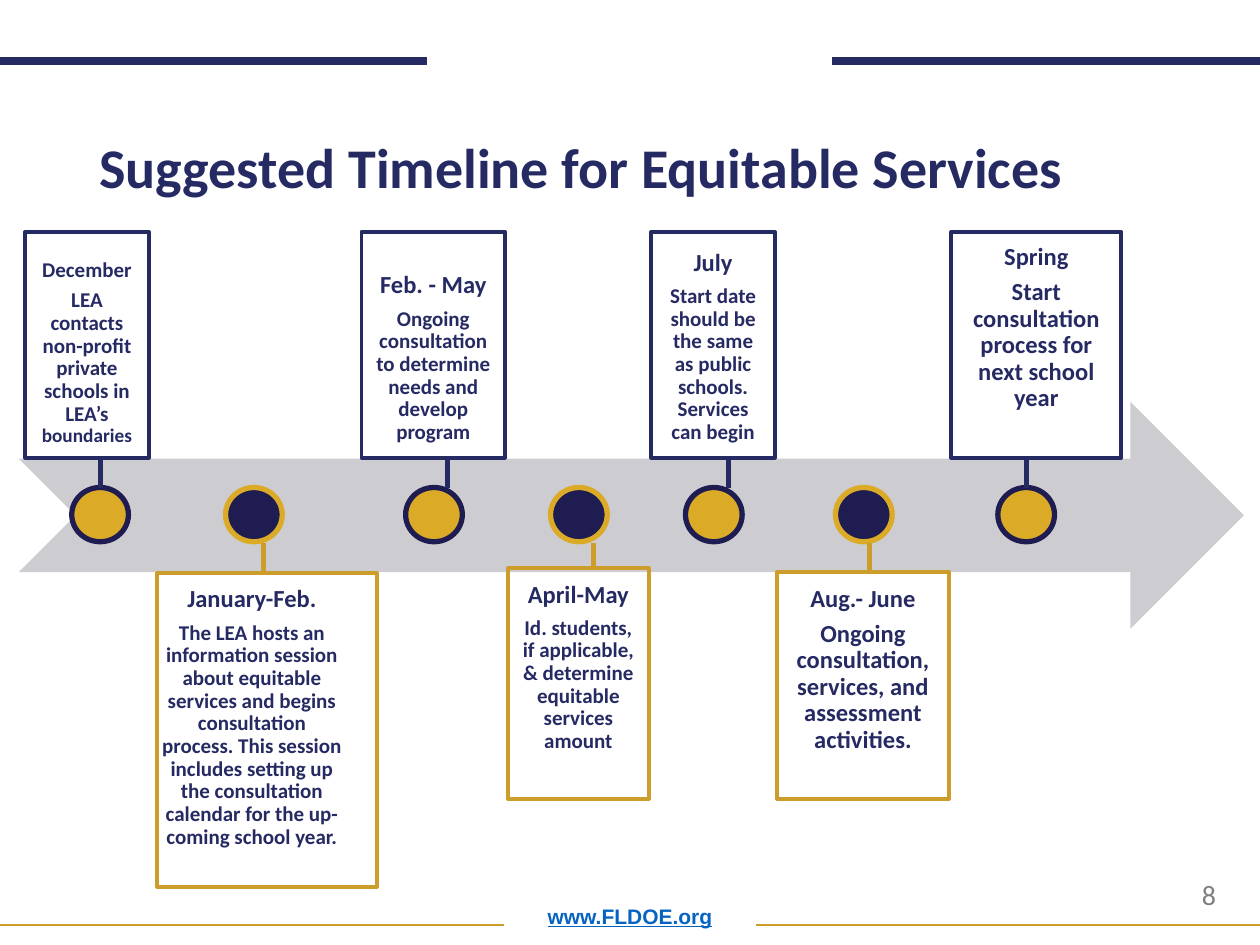
from dataclasses import dataclass

from lxml import etree
from pptx import Presentation
from pptx.dml.color import RGBColor
from pptx.enum.shapes import MSO_CONNECTOR, MSO_SHAPE
from pptx.enum.text import MSO_ANCHOR, PP_ALIGN
from pptx.oxml.ns import qn
from pptx.util import Pt

STRAIGHT = MSO_CONNECTOR.STRAIGHT
RECTANGLE, OVAL = MSO_SHAPE.RECTANGLE, MSO_SHAPE.OVAL
NOTCHED_ARROW = MSO_SHAPE.NOTCHED_RIGHT_ARROW
LEFT, CENTER = PP_ALIGN.LEFT, PP_ALIGN.CENTER
TOP, MIDDLE, BOTTOM = MSO_ANCHOR.TOP, MSO_ANCHOR.MIDDLE, MSO_ANCHOR.BOTTOM


@dataclass(frozen=True)
class Theme:
    navy: str = "262A63"
    dark_navy: str = "1F1C52"
    gold: str = "CD9D2C"
    bright_gold: str = "DBAB27"
    band: str = "CDCDD1"
    link: str = "0563C1"
    muted: str = "7F7F7F"
    font: str = "Calibri"
    footer_font: str = "Arial"
    title: int = 32
    page: int = 16
    large: int = 14
    body: int = 12
    small: int = 11


THEME = Theme()
INSET = 7.9
DOT_TOP, DOT_WIDTH, DOT_HEIGHT = 278.6, 32.4, 31
UPPER_TOP, UPPER_BOTTOM = 132.5, 261.6
LOWER_PIN_TOP = 310.3


@dataclass
class Event:
    left: float
    width: float
    dot_left: float
    pin_x: float
    paragraphs: list  # one list of (text, size) runs per paragraph
    above: bool = True
    top: float = UPPER_TOP
    height: float = UPPER_BOTTOM - UPPER_TOP
    insets: tuple = (INSET,) * 4


def heading_and_body(heading, body, body_size=THEME.body):
    return [[(heading, THEME.large)], [(body, body_size)]]


EVENTS = [
    Event(14.4, 70.6, 41, 57.6,
          [[("December", THEME.body)],
           [("LEA contacts non-profit private schools in LEA’s ", THEME.body),
            ("boundaries", THEME.small)]], insets=(6.5,) * 4),
    Event(90, 125.3, 128.9, 150.5,
          heading_and_body("January-Feb.",
                           "The LEA hosts an information session about equitable "
                           "services and begins consultation process. This session "
                           "includes setting up the consultation calendar for the "
                           "up-coming school year."),
          above=False, top=327.4, height=179.3, insets=(1.4, INSET, 18.7, INSET)),
    Event(206.6, 82.1, 231.8, 255.6,
          heading_and_body("Feb. - May", "Ongoing consultation to determine needs "
                                         "and develop program")),
    Event(290.2, 80.6, 314.6, 339.1,
          heading_and_body("April-May", "Id. students, if applicable, & determine "
                                        "equitable services amount"),
          above=False, top=324.7, height=131.8),
    Event(372.2, 70.6, 391.7, 416.2,
          heading_and_body("July", "Start date should be the same as public schools. "
                                   "Services can begin")),
    Event(444.2, 97.9, 477.4, 496.8,
          heading_and_body("Aug.- June", "Ongoing consultation, services, and "
                                         "assessment activities.", THEME.large),
          above=False, top=326.9, height=129.6),
    Event(543.6, 97.2, 570.2, 586.8,
          heading_and_body("Spring", "Start consultation process for next school year",
                           THEME.large), insets=(INSET, INSET, INSET, 26)),
]


class SlideBuilder:
    def __init__(self, slide, theme):
        self.slide = slide
        self.theme = theme

    def line(self, x1, y1, x2, y2, color, width):
        connector = self.slide.shapes.add_connector(
            STRAIGHT, Pt(x1), Pt(y1), Pt(x2), Pt(y2))
        connector.line.color.rgb = RGBColor.from_string(color)
        connector.line.width = Pt(width)
        etree.SubElement(connector._element.spPr, qn("a:effectLst"))

    def shape(self, kind, left, top, width, height, fill=None, outline=None, weight=0):
        shape = self.slide.shapes.add_shape(
            kind, Pt(left), Pt(top), Pt(width), Pt(height))
        shape.shadow.inherit = False
        if fill:
            shape.fill.solid()
            shape.fill.fore_color.rgb = RGBColor.from_string(fill)
        else:
            shape.fill.background()
        if outline:
            shape.line.color.rgb = RGBColor.from_string(outline)
            shape.line.width = Pt(weight)
        else:
            shape.line.fill.background()
        return shape

    def run(self, paragraph, text, size, color, font=None, bold=True, underline=False):
        run = paragraph.add_run()
        run.text = text
        run.font.name = font or self.theme.font
        run.font.size = Pt(size)
        run.font.bold = bold
        run.font.underline = underline
        run.font.color.rgb = RGBColor.from_string(color)

    def label(self, left, top, width, height, text, size, color,
              align=LEFT, anchor=TOP, spacing=0.9, **run_style):
        box = self.slide.shapes.add_textbox(Pt(left), Pt(top), Pt(width), Pt(height))
        frame = box.text_frame
        frame.word_wrap = True
        frame.vertical_anchor = anchor
        paragraph = frame.paragraphs[0]
        paragraph.alignment = align
        paragraph.line_spacing = spacing
        self.run(paragraph, text, size, color, **run_style)

    def event_card(self, event, outline):
        card = self.shape(RECTANGLE, event.left, event.top, event.width, event.height,
                          outline=outline, weight=2.25)
        frame = card.text_frame
        frame.word_wrap = True
        frame.vertical_anchor = BOTTOM if event.above else TOP
        (frame.margin_left, frame.margin_top,
         frame.margin_right, frame.margin_bottom) = map(Pt, event.insets)
        for index, runs in enumerate(event.paragraphs):
            paragraph = frame.add_paragraph() if index else frame.paragraphs[0]
            paragraph.alignment = CENTER
            paragraph.line_spacing = 0.9
            paragraph.space_after = Pt(0.35 * runs[0][1])
            for text, size in runs:
                self.run(paragraph, text, size, self.theme.navy)

    def event(self, event):
        """Draw the card, its pin and its dot on the timeline."""
        theme = self.theme
        if event.above:
            accent, dot_fill, dot_outline = theme.navy, theme.bright_gold, theme.dark_navy
            pin_from, pin_to = DOT_TOP, UPPER_BOTTOM
        else:
            accent, dot_fill, dot_outline = theme.gold, theme.dark_navy, theme.bright_gold
            pin_from, pin_to = event.top, LOWER_PIN_TOP
        self.event_card(event, accent)
        self.shape(OVAL, event.dot_left, DOT_TOP, DOT_WIDTH, DOT_HEIGHT,
                   dot_fill, dot_outline, 3)
        self.line(event.pin_x, pin_from, event.pin_x, pin_to, accent, 3)


def main():
    presentation = Presentation()
    presentation.slide_width, presentation.slide_height = Pt(720), Pt(540)
    slide = presentation.slides.add_slide(presentation.slide_layouts[6])
    builder = SlideBuilder(slide, THEME)

    for start, end in ((0, 244), (475.5, 720)):
        builder.line(start, 34.8, end, 34.8, THEME.navy, 5)
    for start, end in ((0, 288), (432, 720)):
        builder.line(start, 528.5, end, 528.5, THEME.gold, 1)
    builder.label(49.7, 504, 620.6, 30.2, "www.FLDOE.org", THEME.body, THEME.link,
                  CENTER, BOTTOM, font=THEME.footer_font, underline=True)
    builder.label(679.7, 498.2, 37.4, 26.6, "8", THEME.page, THEME.muted,
                  spacing=1.0, bold=False)
    builder.label(49.7, 66.2, 620.6, 62.6, "Suggested Timeline for Equitable Services",
                  THEME.title, THEME.navy, anchor=MIDDLE)

    builder.shape(NOTCHED_ARROW, 10.8, 229.7, 700, 129.6, THEME.band)
    for event in EVENTS:
        builder.event(event)

    presentation.save("out.pptx")


if __name__ == "__main__":
    main()
